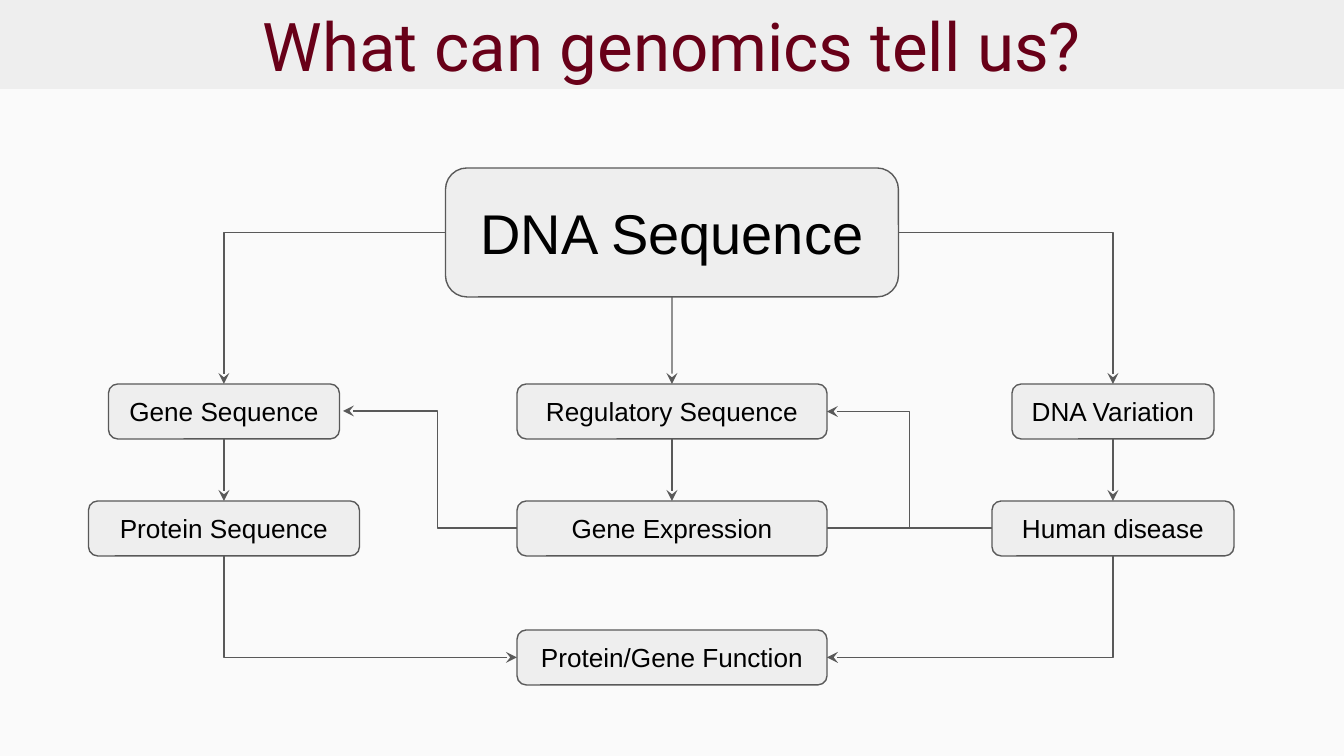
from dataclasses import dataclass
from pptx import Presentation
from pptx.dml.color import RGBColor as Rgb
from pptx.enum.shapes import MSO_CONNECTOR as Link, MSO_SHAPE as Kind
from pptx.enum.text import MSO_ANCHOR as Anchor, MSO_AUTO_SIZE as Fit, PP_ALIGN as Align
from pptx.oxml.ns import qn
from pptx.oxml.xmlchemy import OxmlElement as Node
from pptx.util import Pt

SCALE = 9144000 / 1344
WIDE, HIGH = 1344, 756
TOP, LEFT, BOTTOM, RIGHT = range(4)


@dataclass(frozen=True)
class Theme:
    back: Rgb = Rgb(0xFA, 0xFA, 0xFA)
    fill: Rgb = Rgb(0xEE, 0xEE, 0xEE)
    line: Rgb = Rgb(0x59, 0x59, 0x59)
    ink: Rgb = Rgb(0, 0, 0)
    title: Rgb = Rgb(0x68, 0x00, 0x18)
    head: str = "Roboto"
    body: str = "Arial"
    huge: int = 36
    big: int = 30
    small: int = 14
    rule: float = 0.75


THEME = Theme()


def px(n):
    return round(n * SCALE)


def paint(shape, color):
    shape.fill.solid()
    shape.fill.fore_color.rgb = color


def write(shape, text, size, font, color):
    frame = shape.text_frame
    frame.text = text
    frame.word_wrap = True
    frame.auto_size = Fit.NONE
    frame.vertical_anchor = Anchor.MIDDLE
    frame.margin_left = frame.margin_right = px(13)
    frame.margin_top = frame.margin_bottom = px(13)
    para = frame.paragraphs[0]
    para.alignment = Align.CENTER
    face = para.runs[0].font
    face.size, face.name = Pt(size), font
    face.color.rgb = color


def banner(slide, text):
    title = slide.shapes.title
    title.left, title.top = 0, 0
    title.width, title.height = px(WIDE), px(89)
    paint(title, THEME.fill)
    write(title, text, THEME.huge, THEME.head, THEME.title)


def box(slide, text, mid, top, wide, high=55, size=THEME.small):
    left = mid - wide / 2
    shape = slide.shapes.add_shape(
        Kind.ROUNDED_RECTANGLE, px(left), px(top), px(wide), px(high))
    shape.shadow.inherit = False
    paint(shape, THEME.fill)
    shape.line.color.rgb = THEME.line
    shape.line.width = Pt(THEME.rule)
    write(shape, text, size, THEME.body, THEME.ink)
    return shape


def arrow(slide, kind, ends=(0, 0, 0, 0), tip="a:tailEnd"):
    link = slide.shapes.add_connector(kind, *map(px, ends))
    link.line.color.rgb = THEME.line
    link.line.width = Pt(THEME.rule)
    props = link._element.spPr
    mark = Node(tip)
    mark.set("type", "stealth")
    props.find(qn("a:ln")).append(mark)
    props.append(Node("a:effectLst"))
    return link


def join(link, start, out, end, into):
    link.begin_connect(start, out)
    link.end_connect(end, into)


def drop(slide, start, end):
    join(arrow(slide, Link.STRAIGHT), start, BOTTOM, end, TOP)


def corner(slide, start, out, end, into, tip="a:tailEnd"):
    link = arrow(slide, Link.ELBOW, tip=tip)
    link._element.spPr.find(qn("a:prstGeom")).set("prst", "bentConnector2")
    join(link, start, out, end, into)


def bend(link, ratio):
    guide = Node("a:gd")
    guide.set("name", "adj1")
    guide.set("fmla", f"val {round(ratio * 100000)}")
    link._element.spPr.find(qn("a:prstGeom")).get_or_add_avLst().append(guide)


def main():
    deck = Presentation()
    deck.slide_width, deck.slide_height = px(WIDE), px(HIGH)
    slide = deck.slides.add_slide(deck.slide_layouts[5])
    paint(slide.background, THEME.back)
    banner(slide, "What can genomics tell us?")

    west, mid, east = 224, 672, 1113
    upper, lower, base = 384, 501, 630
    bend(arrow(slide, Link.ELBOW, (994, 528, 343, 411)), 0.855)

    dna = box(slide, "DNA Sequence", mid, 168, 453, 129, THEME.big)
    gene = box(slide, "Gene Sequence", west, upper, 231)
    role = box(slide, "Protein/Gene Function", mid, base, 310)
    protein = box(slide, "Protein Sequence", west, lower, 271)
    control = box(slide, "Regulatory Sequence", mid, upper, 310)
    express = box(slide, "Gene Expression", mid, lower, 310)
    variant = box(slide, "DNA Variation", east, upper, 202)
    disease = box(slide, "Human disease", east, lower, 242)

    for start, end in ((dna, control), (gene, protein),
                       (control, express), (variant, disease)):
        drop(slide, start, end)
    for side, child, cause in ((LEFT, gene, protein), (RIGHT, variant, disease)):
        corner(slide, dna, side, child, TOP)
        corner(slide, role, side, cause, BOTTOM, "a:headEnd")
    join(arrow(slide, Link.ELBOW), disease, LEFT, control, RIGHT)

    deck.save("out.pptx")


if __name__ == "__main__":
    main()
